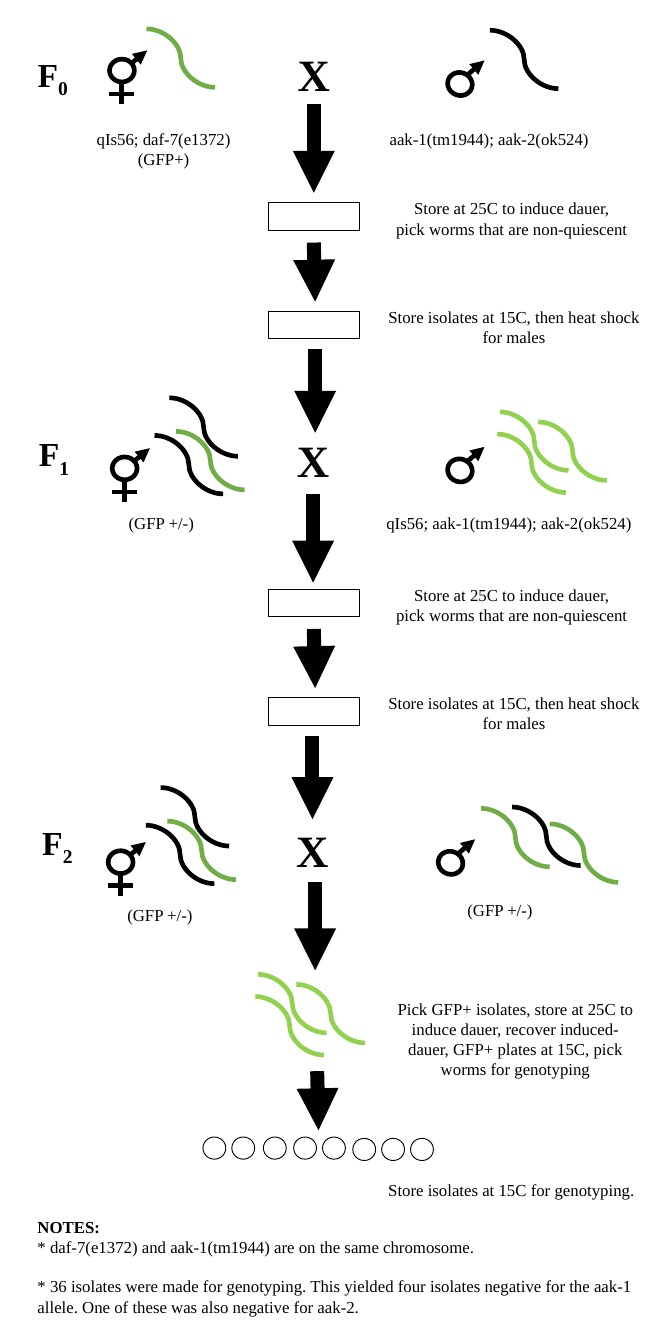
from dataclasses import dataclass
from lxml.etree import SubElement as Sub
from pptx import Presentation
from pptx.dml.color import RGBColor as Rgb
from pptx.enum.shapes import MSO_CONNECTOR as Link, MSO_SHAPE as Form
from pptx.enum.text import MSO_AUTO_SIZE as Fit, PP_ALIGN as Align
from pptx.oxml.ns import qn
from pptx.util import Inches, Pt


@dataclass(frozen=True)
class Theme:
    font: str = "Times New Roman"
    ink: Rgb = Rgb(0, 0, 0)
    green: Rgb = Rgb(0x70, 0xAD, 0x47)
    lime: Rgb = Rgb(0x92, 0xD0, 0x50)
    body: int = 18
    label: int = 36
    cross: int = 48
    thin: int = 1
    pen: int = 5
    bar: int = 15


class Chart:
    """Draws the elements of a worm crossing scheme on one slide."""

    def __init__(self, slide, theme):
        self.slide = slide
        self.theme = theme

    def run(self, para, text, size, bold=False):
        run = para.add_run()
        run.text = text
        font = run.font
        font.name, font.size, font.bold = self.theme.font, Pt(size), bold
        font.color.rgb = self.theme.ink
        return run

    def frame(self, x, y, w, h, wrap=False):
        box = self.slide.shapes.add_textbox(Inches(x), Inches(y), Inches(w), Inches(h))
        frame = box.text_frame
        frame.word_wrap = wrap
        frame.auto_size = Fit.SHAPE_TO_FIT_TEXT
        return frame

    def text(self, x, y, w, h, *lines, wrap=False):
        frame = self.frame(x, y, w, h, wrap)
        for i, line in enumerate(lines):
            para = frame.add_paragraph() if i else frame.paragraphs[0]
            para.alignment = Align.CENTER
            self.run(para, line, self.theme.body)

    def cross(self, x, y):
        para = self.frame(x, y, 0.69, 0.91).paragraphs[0]
        self.run(para, "X", self.theme.cross, True)

    def label(self, x, y, digit):
        para = self.frame(x, y, 0.68, 0.71).paragraphs[0]
        self.run(para, "F", self.theme.label, True)
        sub = self.run(para, digit, self.theme.label, True)
        sub.font._element.set("baseline", "-25000")

    def notes(self, x, y, w, h, head, *lines):
        frame = self.frame(x, y, w, h, True)
        self.run(frame.paragraphs[0], head, self.theme.body, True)
        for line, gap in lines:
            para = frame.add_paragraph()
            para.space_before = Pt(gap)
            self.run(para, line, self.theme.body)

    def shape(self, form, x, y, w, h, pen, turn=0):
        shape = self.slide.shapes.add_shape(form, Inches(x), Inches(y), Inches(w), Inches(h))
        shape.shadow.inherit = False
        shape.fill.background()
        shape.line.color.rgb = self.theme.ink
        shape.line.width = Pt(pen)
        shape.rotation = turn

    def line(self, x1, y1, x2, y2, pen, tint=None, head=False, kind=Link.STRAIGHT):
        link = self.slide.shapes.add_connector(
            kind, Inches(x1), Inches(y1), Inches(x2), Inches(y2))
        link.line.color.rgb = tint or self.theme.ink
        link.line.width = Pt(pen)
        if head:
            Sub(link.line._get_or_add_ln(), qn("a:tailEnd"), type="triangle")
        Sub(link._element.spPr, qn("a:effectLst"))

    def arrow(self, x1, y1, x2, y2):
        self.line(x1, y1, x2, y2, self.theme.bar, head=True)

    def worm(self, x, y, tint):
        self.line(x, y, x + 1.02, y + 0.87, self.theme.pen, tint, kind=Link.CURVE)

    def mixed(self, x, y):
        ink, green = self.theme.ink, self.theme.green
        for dx, dy, tint in ((0, 0, ink), (0.1, 0.5, green), (-0.22, 0.56, ink)):
            self.worm(x + dx, y + dy, tint)

    def limes(self, x, y):
        for dx, dy in ((0, 0), (-0.04, 0.33), (0.57, 0.15)):
            self.worm(x + dx, y + dy, self.theme.lime)

    def ring(self, x, y, turn=0):
        self.shape(Form.OVAL, x, y, 0.37, 0.34, self.theme.pen, turn)

    def male(self, x, y):
        self.line(x + 0.3, y + 0.03, x + 0.55, y - 0.18, self.theme.pen, head=True)
        self.ring(x, y, 20)

    def both(self, x, y):
        pen = self.theme.pen
        self.ring(x, y)
        self.line(x + 0.18, y + 0.34, x + 0.18, y + 0.67, pen)
        self.line(x + 0.37, y + 0.52, x - 0.01, y + 0.52, pen)
        self.line(x + 0.33, y + 0.06, x + 0.56, y - 0.13, pen, head=True)

    def steps(self, y):
        for top in (y, y + 1.61):
            self.shape(Form.RECTANGLE, 3.99, top, 1.36, 0.41, self.theme.thin)
        self.arrow(4.67, y + 0.59, 4.69, y + 1.47)
        self.text(5.7, y - 0.12, 3.83, 0.71, "Store at 25C to induce dauer,",
                  "pick worms that are non-quiescent")
        self.text(5.63, y + 1.49, 4.04, 0.71,
                  "Store isolates at 15C, then heat shock", "for males")

    def plates(self):
        for i, x in enumerate((3.02, 3.45, 3.92, 4.37, 4.8, 5.25, 5.68, 6.11)):
            self.shape(Form.OVAL, x, 16.92 if i < 5 else 16.94, 0.34, 0.33, self.theme.thin)


def main():
    deck = Presentation()
    deck.slide_width, deck.slide_height = Inches(10), Inches(20)
    theme = Theme()
    chart = Chart(deck.slides.add_slide(deck.slide_layouts[6]), theme)

    for digit, x, y in (("0", 0.46, 0.75), ("1", 0.48, 6.4), ("2", 0.53, 12.18)):
        chart.label(x, y, digit)
    for x, y in ((4.33, 0.64), (4.32, 6.39), (4.31, 12.19)):
        chart.cross(x, y)
    for x, y in ((1.63, 0.88), (1.67, 6.8), (1.61, 12.66)):
        chart.both(x, y)
    for x, y in ((6.66, 1.08), (6.66, 6.83), (6.52, 12.67)):
        chart.male(x, y)

    chart.worm(2.18, 0.43, theme.green)
    chart.worm(7.29, 0.45, theme.ink)
    chart.mixed(2.52, 5.92)
    chart.limes(7.44, 6.13)
    chart.mixed(2.39, 11.72)
    chart.worm(7.62, 12.01, theme.ink)
    chart.worm(7.16, 12.03, theme.green)
    chart.worm(8.18, 12.26, theme.green)
    chart.limes(3.84, 14.5)

    for y in (3.02, 8.77):
        chart.steps(y)
    for x, top, end in ((4.67, 1.55, 2.87), (4.69, 5.19, 6.44), (4.66, 7.35, 8.67),
                        (4.65, 10.95, 12.19), (4.69, 13.13, 14.44)):
        chart.arrow(x, top, x, end)
    chart.arrow(4.72, 15.94, 4.74, 16.82)
    chart.plates()

    chart.text(1.33, 1.86, 2.21, 0.71, "qIs56; daf-7(e1372)", "(GFP+)")
    chart.text(5.63, 1.86, 3.3, 0.4, "aak-1(tm1944); aak-2(ok524)")
    chart.text(5.63, 7.58, 3.89, 0.4, "qIs56; aak-1(tm1944); aak-2(ok524)")
    for x, y in ((1.81, 7.58), (1.79, 13.41), (6.85, 13.34)):
        chart.text(x, y, 1.18, 0.4, "(GFP +/-)")
    chart.text(5.77, 14.81, 3.8, 1.31,
               "Pick GFP+ isolates, store at 25C to induce dauer, recover induced-dauer, "
               "GFP+ plates at 15C, pick worms for genotyping", wrap=True)
    chart.text(5.66, 17.51, 3.9, 0.4, "Store isolates at 15C for genotyping.")
    chart.notes(
        0.46, 18.05, 9.24, 1.62, "NOTES:",
        ("* daf-7(e1372) and aak-1(tm1944) are on the same chromosome.", 0),
        ("* 36 isolates were made for genotyping. This yielded four isolates "
         "negative for the aak-1", 21),
        ("allele. One of these was also negative for aak-2.", 0))
    deck.save("out.pptx")


if __name__ == "__main__":
    main()
